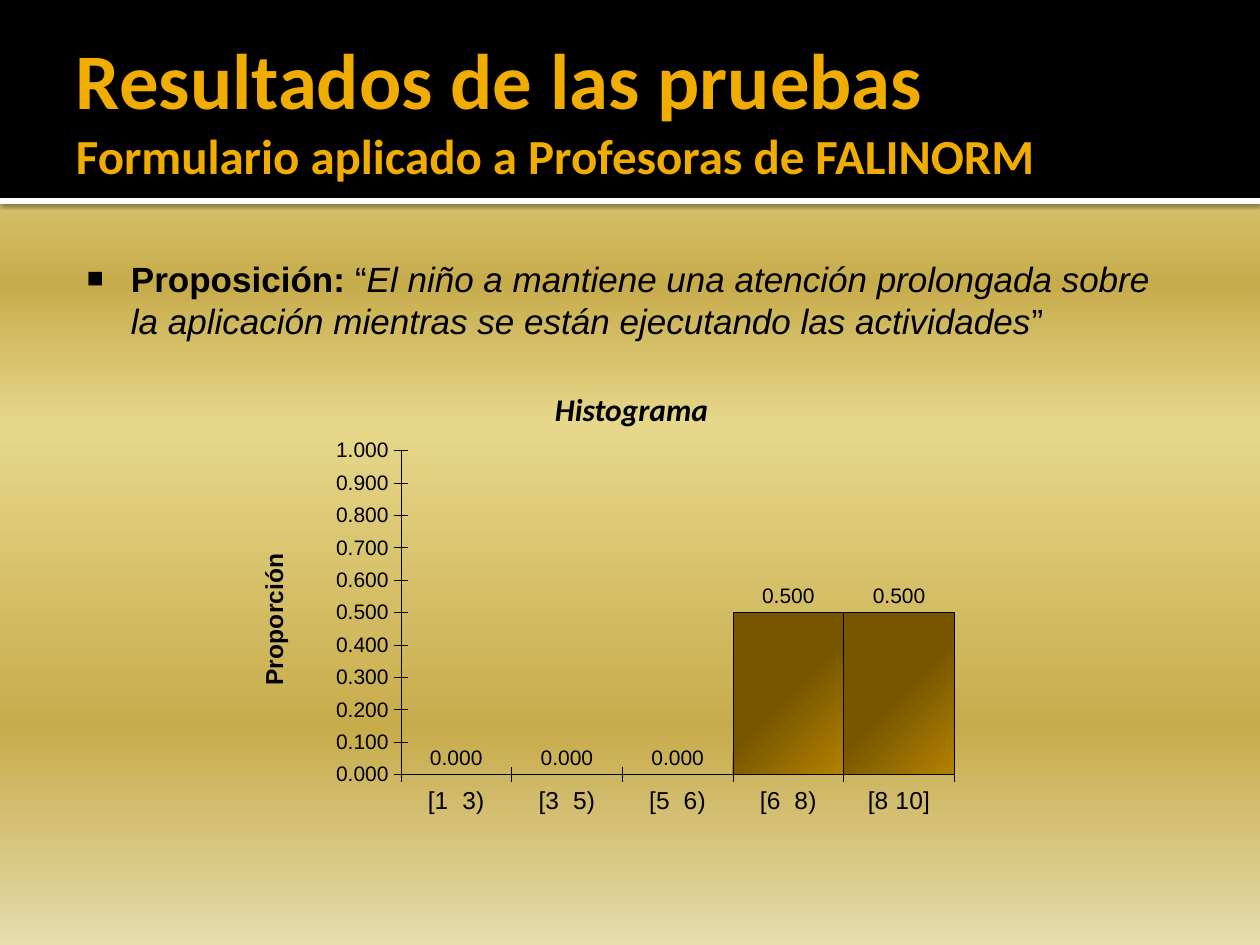
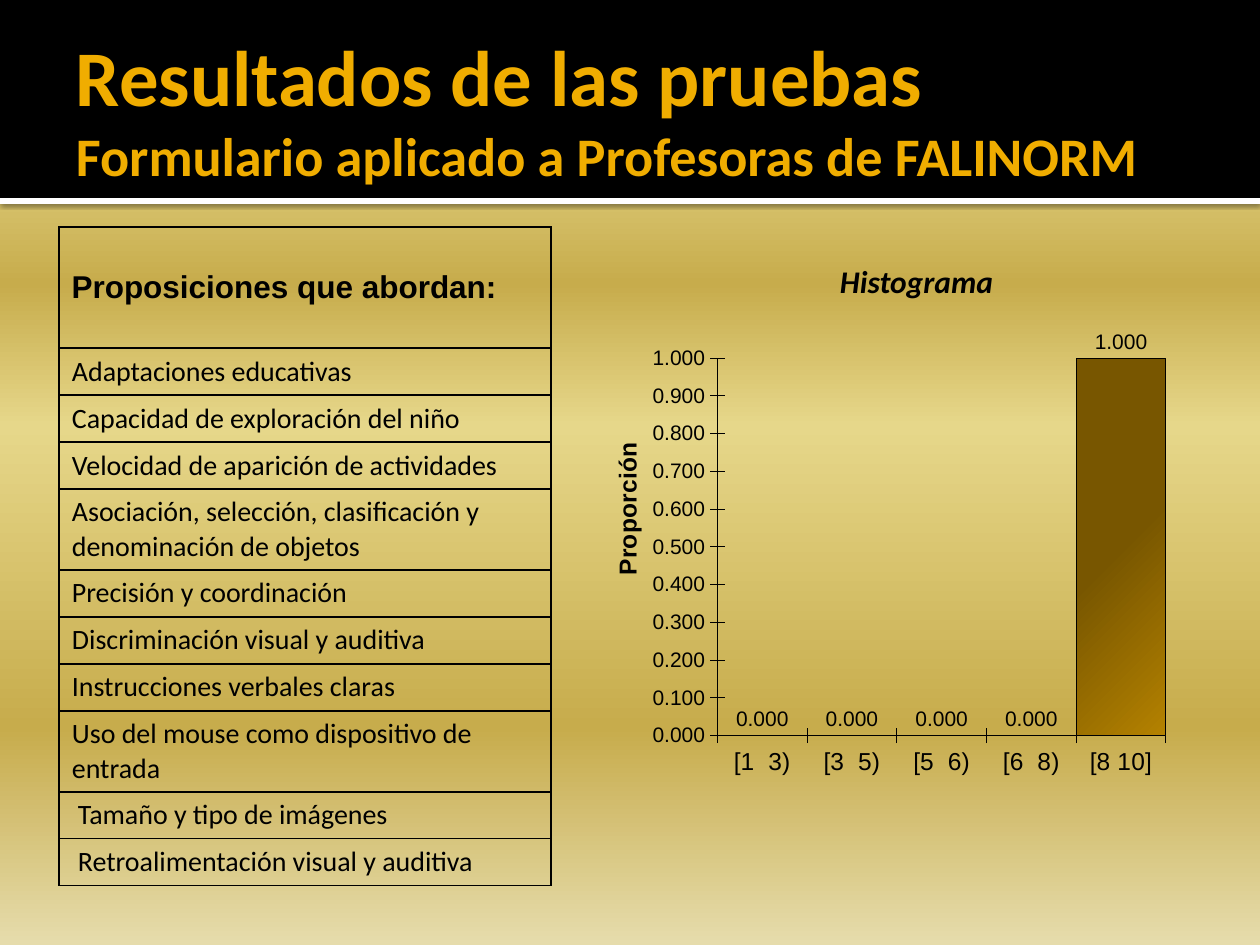
from lxml.etree import SubElement
from pptx import Presentation
from pptx.chart.data import CategoryChartData
from pptx.dml.color import RGBColor
from pptx.enum.chart import XL_CHART_TYPE, XL_LABEL_POSITION, XL_TICK_MARK
from pptx.enum.shapes import MSO_SHAPE
from pptx.enum.text import MSO_ANCHOR
from pptx.oxml.ns import qn
from pptx.util import Emu, Pt

PIXELS_PER_INCH = 126
SLIDE_WIDTH, SLIDE_HEIGHT = 1260, 945
BLACK = RGBColor(0x00, 0x00, 0x00)
WHITE = RGBColor(0xFF, 0xFF, 0xFF)
AMBER = RGBColor(0xF0, 0xAD, 0x00)
PALE = RGBColor(0xE6, 0xDC, 0xAC)
STRAW = RGBColor(0xE6, 0xD7, 0x8A)
GOLD = RGBColor(0xC7, 0xAC, 0x4C)
BROWN = RGBColor(0x78, 0x56, 0x00)
OCHRE = RGBColor(0xB4, 0x82, 0x00)
BACKGROUND_STOPS = [(0, PALE), (12, STRAW), (30, GOLD),
                    (45, STRAW), (77, GOLD), (100, PALE)]
BAR_STOPS = [(0, BROWN), (50, BROWN), (100, OCHRE)]
HEADING, BODY = "Calibri", "Arial"
NUMBER_FORMAT = "#,##0.000"
INTERVALS = ["[1  3)", "[3  5)", "[5  6)", "[6  8)", "[8 10]"]
TOPICS = [
    "Adaptaciones educativas",
    "Capacidad de exploración del niño",
    "Velocidad de aparición de actividades",
    "Asociación, selección, clasificación y denominación de objetos",
    "Precisión y coordinación",
    "Discriminación visual y auditiva",
    "Instrucciones verbales claras",
    "Uso del mouse como dispositivo de entrada",
    "Tamaño y tipo de imágenes",
    "Retroalimentación visual y auditiva",
]
TWO_LINE_TOPICS = (3, 7)
INDENTED_TOPICS = (8, 9)


def px(length):
    """Turn pixels into EMU."""
    return Emu(round(length * 914400 / PIXELS_PER_INCH))


def box(*lengths):
    """Turn left, top, width and height into EMU."""
    return [px(length) for length in lengths]


def add_xml(parent, tag, **attributes):
    """Append a child element with the given attributes."""
    return SubElement(parent, qn(tag),
                      {key: str(value) for key, value in attributes.items()})


def style_font(font, size, name=BODY, color=BLACK, bold=False, italic=False):
    """Set the look of a font."""
    font.size, font.name = Pt(size), name
    font.bold, font.italic = bold, italic
    font.color.rgb = color


def add_run(paragraph, text, size, **style):
    """Add one styled run."""
    run = paragraph.add_run()
    run.text = text
    style_font(run.font, size, **style)


def set_gradient(element, stops, angle):
    """Give the gradients below an element these stops and angle."""
    for gradient in element.iter(qn("a:gradFill")):
        for child in list(gradient):
            gradient.remove(child)
        stop_list = add_xml(gradient, "a:gsLst")
        for percent, color in stops:
            stop = add_xml(stop_list, "a:gs", pos=percent * 1000)
            add_xml(stop, "a:srgbClr", val=color)
        add_xml(gradient, "a:lin", ang=angle * 60000, scaled=0)


def add_text_box(slide, area, margins=(13, 6, 13, 6)):
    """Add a wrapping text box and return its text frame."""
    frame = slide.shapes.add_textbox(*box(*area)).text_frame
    frame.word_wrap = True
    (frame.margin_left, frame.margin_top,
     frame.margin_right, frame.margin_bottom) = box(*margins)
    return frame


def add_band(slide, top, height, color):
    """Add a full-width band."""
    band = slide.shapes.add_shape(MSO_SHAPE.RECTANGLE,
                                  *box(0, top, SLIDE_WIDTH, height))
    band.shadow.inherit = False
    band.fill.solid()
    band.fill.fore_color.rgb = color
    band.line.fill.background()
    return band


def add_band_shadow(band):
    """Cast a soft shadow below a band."""
    effects = band.element.find(".//" + qn("a:effectLst"))
    shadow = add_xml(effects, "a:outerShdw", blurRad=Pt(2.5), dist=Pt(0.8),
                     dir=90 * 60000, algn="t", rotWithShape=0)
    color = add_xml(shadow, "a:srgbClr", val=BLACK)
    add_xml(color, "a:alpha", val=60000)


def add_results_slide(deck, subtitle_size):
    """Add a slide with the shared background, bands and title."""
    slide = deck.slides.add_slide(deck.slide_layouts[6])
    slide.background.fill.gradient()
    set_gradient(slide.element, BACKGROUND_STOPS, 90)
    add_band_shadow(add_band(slide, 198, 6, WHITE))
    add_band(slide, 0, 198, BLACK)
    frame = add_text_box(slide, (63, 21, 1134, 173), (13, 6, 6, 6))
    frame.vertical_anchor = MSO_ANCHOR.MIDDLE
    title = frame.paragraphs[0]
    look = dict(name=HEADING, color=AMBER, bold=True)
    add_run(title, "Resultados de las pruebas", 45, **look)
    title.add_line_break()
    add_run(title, "Formulario aplicado a Profesoras de FALINORM",
            subtitle_size, **look)
    return slide


def add_proposition(slide):
    """Add the bulleted proposition."""
    frame = add_text_box(slide, (63, 244, 1134, 120), (8, 13, 13, 6))
    proposition = frame.paragraphs[0]
    properties = proposition._p.get_or_add_pPr()
    properties.set("marL", str(px(60)))
    properties.set("indent", str(px(-44)))
    add_xml(properties, "a:buSzPct", val=80000)
    add_xml(properties, "a:buFont", typeface=BODY)
    add_xml(properties, "a:buChar", char="■")
    add_run(proposition, "Proposición: ", 20, bold=True)
    add_run(proposition, "“", 20)
    add_run(proposition, "El niño a mantiene una atención prolongada sobre la "
            "aplicación mientras se están ejecutando las actividades",
            20, italic=True)
    add_run(proposition, "”", 20)


def add_histogram_heading(slide, left, top):
    """Add the heading above a histogram."""
    heading = add_text_box(slide, (left, top, 256, 89)).paragraphs[0]
    add_run(heading, "Histograma", 18, name=HEADING, bold=True, italic=True)


def set_layout(element, index, **fractions):
    """Place a chart part by fractions of the chart area."""
    for old in element.findall(qn("c:layout")):
        element.remove(old)
    layout = add_xml(element, "c:layout")
    element.insert(index, layout)
    manual = add_xml(layout, "c:manualLayout")
    if "w" in fractions:
        add_xml(manual, "c:layoutTarget", val="inner")
    for mode in ("c:xMode", "c:yMode"):
        add_xml(manual, mode, val="edge")
    for side, fraction in fractions.items():
        add_xml(manual, "c:" + side, val=fraction)


def style_axis(axis, size):
    """Set the line, ticks and labels of an axis."""
    axis.has_major_gridlines = False
    axis.major_tick_mark = XL_TICK_MARK.CROSS
    axis.minor_tick_mark = XL_TICK_MARK.NONE
    axis.format.line.color.rgb = BLACK
    axis.format.line.width = Pt(0.5)
    style_font(axis.tick_labels.font, size)


def add_histogram(slide, area, proportions, plot_area, title_place):
    """Add a histogram of proportions by interval."""
    data = CategoryChartData(number_format=NUMBER_FORMAT)
    data.categories = INTERVALS
    data.add_series("Proporción", proportions)
    chart = slide.shapes.add_chart(XL_CHART_TYPE.COLUMN_CLUSTERED,
                                   *box(*area), data).chart
    chart.has_title = chart.has_legend = False
    style_font(chart.font, 12)

    plot = chart.plots[0]
    plot.gap_width = 0
    plot.vary_by_categories = False
    bars = plot.series[0]
    bars.format.fill.gradient()
    set_gradient(chart.element, BAR_STOPS, 45)
    bars.format.line.color.rgb = BLACK
    bars.format.line.width = Pt(0.5)
    labels = bars.data_labels
    labels.show_value = True
    labels.number_format = NUMBER_FORMAT
    labels.number_format_is_linked = False
    labels.position = XL_LABEL_POSITION.OUTSIDE_END
    style_font(labels.font, 12)

    style_axis(chart.category_axis, 14)
    scale = chart.value_axis
    style_axis(scale, 12)
    scale.minimum_scale, scale.maximum_scale, scale.major_unit = 0, 1, 0.1
    scale.tick_labels.number_format = NUMBER_FORMAT
    scale.tick_labels.number_format_is_linked = False
    title = scale.axis_title
    add_run(title.text_frame.paragraphs[0], "Proporción", 14, bold=True)
    title.element.find(".//" + qn("a:bodyPr")).set("rot", str(-90 * 60000))
    set_layout(title.element, 1, **dict(zip("xy", title_place)))
    set_layout(chart.element.find(".//" + qn("c:plotArea")), 0,
               **dict(zip("xywh", plot_area)))


def style_cell(cell):
    """Clear the fill of a cell and draw its borders."""
    cell.fill.background()
    cell.vertical_anchor = MSO_ANCHOR.MIDDLE
    properties = cell._tc.get_or_add_tcPr()
    for index, side in enumerate(("a:lnL", "a:lnR", "a:lnT", "a:lnB")):
        border = add_xml(properties, side, w=Pt(1))
        add_xml(add_xml(border, "a:solidFill"), "a:srgbClr", val=BLACK)
        properties.insert(index, border)


def add_topics_table(slide):
    """Add the table of topics covered by the propositions."""
    heights = [121] + [81 if index in TWO_LINE_TOPICS else 47
                       for index in range(len(TOPICS))]
    table = slide.shapes.add_table(
        len(heights), 1, *box(59, 227, 492, sum(heights))).table
    table.first_row = table.horz_banding = False
    for row, height in zip(table.rows, heights):
        row.height = px(height)
        style_cell(row.cells[0])
    add_run(table.cell(0, 0).text_frame.paragraphs[0],
            "Proposiciones que abordan:", 18, bold=True)
    for index, topic in enumerate(TOPICS):
        cell = table.cell(index + 1, 0)
        cell.margin_left = px(19 if index in INDENTED_TOPICS else 13)
        add_run(cell.text_frame.paragraphs[0], topic, 16, name=HEADING)


def main():
    """Build both slides and save the deck."""
    deck = Presentation()
    deck.slide_width, deck.slide_height = px(SLIDE_WIDTH), px(SLIDE_HEIGHT)

    attention = add_results_slide(deck, 28)
    add_proposition(attention)
    add_histogram(attention, (246, 433, 738, 444), [0, 0, 0, 0.5, 0.5],
                  (0.21, 0.04, 0.75, 0.73), (0.01, 0.26))
    add_histogram_heading(attention, 542, 384)

    topics = add_results_slide(deck, 31)
    add_topics_table(topics)
    add_histogram(topics, (581, 305, 650, 532), [0, 0, 0, 0, 1],
                  (0.21, 0.1, 0.69, 0.71), (0.04, 0.25))
    add_histogram_heading(topics, 827, 256)

    deck.save("out.pptx")


main()
